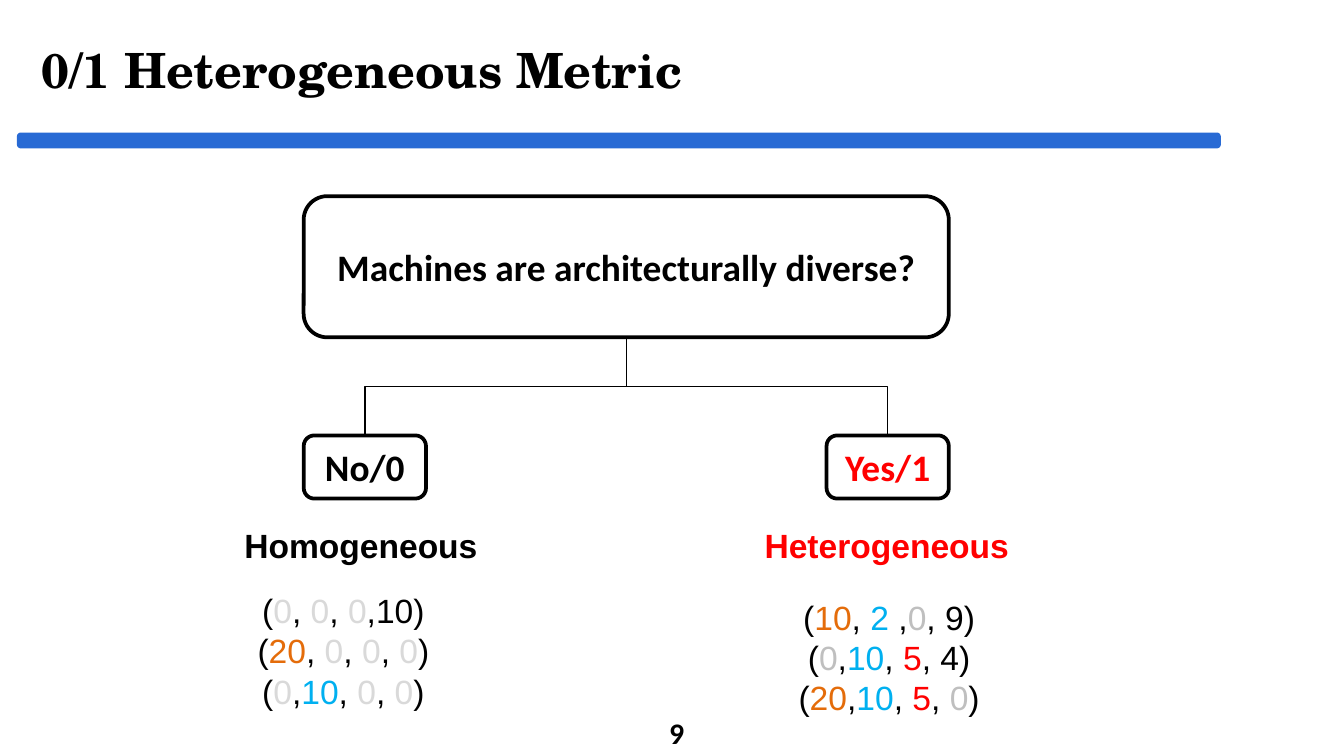
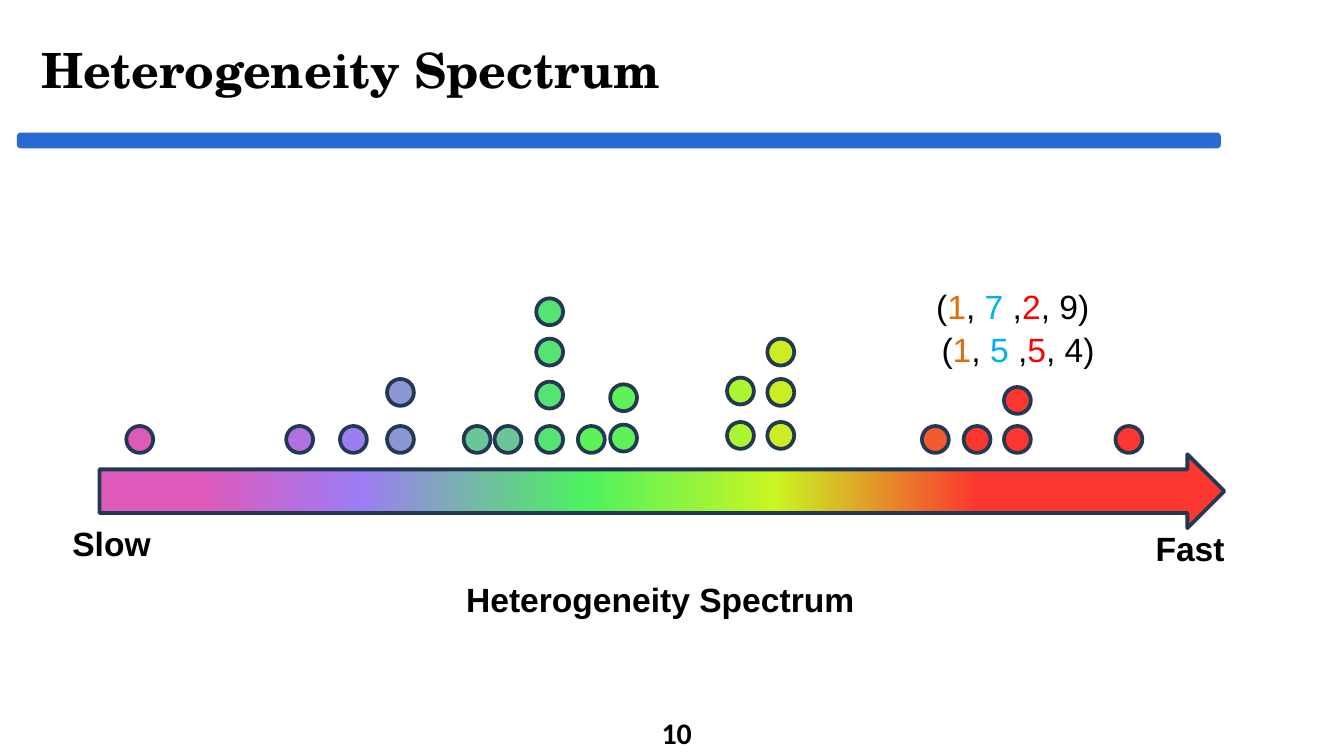
from itertools import groupby

from lxml.etree import SubElement
from pptx import Presentation
from pptx.dml.color import RGBColor
from pptx.enum.shapes import MSO_CONNECTOR, MSO_SHAPE
from pptx.enum.text import MSO_ANCHOR, PP_ALIGN
from pptx.oxml.ns import qn
from pptx.util import Inches, Pt

BLACK = RGBColor(0x00, 0x00, 0x00)
RED = RGBColor(0xFF, 0x00, 0x00)
ORANGE = RGBColor(0xE4, 0x6C, 0x0A)
SKY = RGBColor(0x00, 0xB0, 0xF0)
LIGHT_GRAY = RGBColor(0xD9, 0xD9, 0xD9)
GRAY = RGBColor(0xBF, 0xBF, 0xBF)
BAND_BLUE = RGBColor(0x28, 0x6A, 0xD4)
NAVY = RGBColor(0x23, 0x39, 0x53)
PINK = RGBColor(0xDD, 0x59, 0xBA)
PURPLE = RGBColor(0xB2, 0x71, 0xE2)
VIOLET = RGBColor(0x9E, 0x7D, 0xF3)
PERIWINKLE = RGBColor(0x8C, 0x96, 0xD3)
TEAL = RGBColor(0x6B, 0xC6, 0x97)
GREEN = RGBColor(0x57, 0xE2, 0x74)
BRIGHT_GREEN = RGBColor(0x5E, 0xF2, 0x59)
LIME = RGBColor(0xAB, 0xF5, 0x31)
YELLOW = RGBColor(0xCC, 0xEC, 0x23)
FLAME = RGBColor(0xF2, 0x5B, 0x2D)
SCARLET = RGBColor(0xFC, 0x37, 0x2F)

MACHINE_COLORS = (ORANGE, SKY, RED, BLACK)
SPECTRUM = (
    (9, PINK),
    (23, RGBColor(0x9E, 0x7C, 0xF4)),
    (43, RGBColor(0x4D, 0xF1, 0x61)),
    (60, RGBColor(0xC9, 0xF6, 0x22)),
    (78, SCARLET),
)
DOT_COLUMNS = (
    (0.2, PINK, (0.21,)),
    (1.39, PURPLE, (0.21,)),
    (1.79, VIOLET, (0.21,)),
    (2.14, PERIWINKLE, (0.21, 0.56)),
    (2.71, TEAL, (0.21,)),
    (2.94, TEAL, (0.21,)),
    (3.25, GREEN, (0.21, 0.54, 0.86, 1.16)),
    (3.56, BRIGHT_GREEN, (0.21,)),
    (3.8, BRIGHT_GREEN, (0.22, 0.52)),
    (4.67, LIME, (0.24, 0.57)),
    (4.97, YELLOW, (0.24, 0.56, 0.86)),
    (6.12, FLAME, (0.21,)),
    (6.43, SCARLET, (0.21,)),
    (6.73, SCARLET, (0.21, 0.5)),
    (7.56, SCARLET, (0.21,)),
)
DOT_SIZE = 0.2


def style_run(r, size, color, font, bold):
    r.font.size = Pt(size)
    r.font.name = font
    r.font.bold = bold
    r.font.color.rgb = color


def write(sp, text, size, color=BLACK, font="Arial", align=PP_ALIGN.LEFT):
    p = sp.text_frame.paragraphs[0]
    p.text = text
    p.alignment = align
    style_run(p.runs[0], size, color, font, True)


def add_text(s, left, top, width, height, wrap=True, anchor=MSO_ANCHOR.TOP):
    box = s.shapes.add_textbox(Inches(left), Inches(top), Inches(width), Inches(height))
    box.text_frame.word_wrap = wrap
    box.text_frame.vertical_anchor = anchor
    return box


def add_label(s, left, top, width, text, color=BLACK):
    write(add_text(s, left, top, width, 0.4, wrap=False), text, 18, color)


def add_outlined(s, kind, left, top, width, height, line, fill=None):
    sp = s.shapes.add_shape(kind, Inches(left), Inches(top), Inches(width), Inches(height))
    sp.shadow.inherit = False
    sp.line.color.rgb = line
    sp.line.width = Pt(2)
    if fill is None:
        sp.fill.background()
    else:
        sp.fill.solid()
        sp.fill.fore_color.rgb = fill
    return sp


def add_vectors(s, left, top, width, vectors, zero_color=GRAY):
    tf = add_text(s, left, top, width, 0.1 + 0.3 * len(vectors)).text_frame
    for i, vector in enumerate(vectors):
        p = tf.paragraphs[0] if i == 0 else tf.add_paragraph()
        p.alignment = PP_ALIGN.CENTER
        colors = iter(MACHINE_COLORS)
        for is_number, chars in groupby(vector, str.isdigit):
            r = p.add_run()
            r.text = "".join(chars)
            color = next(colors) if is_number else BLACK
            style_run(r, 18, zero_color if r.text == "0" else color, "Arial", False)


def add_frame(prs, title, number):
    s = prs.slides.add_slide(prs.slide_layouts[6])
    add_outlined(s, MSO_SHAPE.ROUNDED_RECTANGLE, 0.14, 1, 8.93, 0.09, BAND_BLUE, BAND_BLUE)
    heading = add_text(s, 0.21, 0.1, 8.9, 0.83, anchor=MSO_ANCHOR.MIDDLE)
    write(heading, title, 26, font="TeX Gyre Schola")
    footer = add_text(s, 3.87, 5.3, 2.33, 0.3, anchor=MSO_ANCHOR.MIDDLE)
    write(footer, str(number), 16, font="Calibri", align=PP_ALIGN.CENTER)
    return s


def add_node(s, left, top, width, height, text, color=BLACK):
    sp = add_outlined(s, MSO_SHAPE.ROUNDED_RECTANGLE, left, top, width, height, BLACK)
    sp.text_frame.word_wrap = True
    sp.text_frame.vertical_anchor = MSO_ANCHOR.MIDDLE
    write(sp, text, 20, color, "Calibri", PP_ALIGN.CENTER)


def add_branch(s, x1, y1, x2, y2):
    drop, run = y2 - y1, x2 - x1
    mid_x, mid_y = (x1 + x2) / 2, (y1 + y2) / 2
    dx = drop / 2 if run > 0 else -drop / 2
    dy = abs(run) / 2
    cn = s.shapes.add_connector(
        MSO_CONNECTOR.ELBOW,
        Inches(mid_x + dx), Inches(mid_y - dy),
        Inches(mid_x - dx), Inches(mid_y + dy),
    )
    cn.line.color.rgb = BLACK
    cn.line.width = Pt(0.75)
    spPr = cn.element.spPr
    spPr.find(qn("a:xfrm")).set("rot", str((270 if run > 0 else 90) * 60000))
    SubElement(spPr, qn("a:effectLst"))


def add_decision_tree(s, left, top, width):
    root_h, leaf_top, leaf_w, leaf_h = 1.05, 1.78, 0.91, 0.47
    add_node(s, left, top, width, root_h, "Machines are architecturally diverse?")
    leaves = ((left + width - leaf_w, "Yes/1", RED), (left, "No/0", BLACK))
    for x, text, color in leaves:
        add_node(s, x, top + leaf_top, leaf_w, leaf_h, text, color)
        add_branch(s, left + width / 2, top + root_h, x + leaf_w / 2, top + leaf_top)


def add_spectrum_arrow(s, left, top, width, height):
    sp = add_outlined(s, MSO_SHAPE.RIGHT_ARROW, left, top, width, height, NAVY)
    sp.adjustments[0] = 0.59
    sp.adjustments[1] = 0.5
    sp.fill.gradient()
    sp.fill.gradient_angle = 0
    stops = sp.element.spPr.find(qn("a:gradFill")).find(qn("a:gsLst"))
    for stop in list(stops):
        stops.remove(stop)
    for percent, color in SPECTRUM:
        gs = SubElement(stops, qn("a:gs"), pos=str(percent * 1000))
        SubElement(gs, qn("a:srgbClr"), val=str(color))


def add_dots(s, left, base):
    for x, color, rises in DOT_COLUMNS:
        for rise in rises:
            add_outlined(s, MSO_SHAPE.OVAL, left + x, base - rise, DOT_SIZE, DOT_SIZE, NAVY, color)


def build_metric_slide(prs):
    s = add_frame(prs, "0/1 Heterogeneous Metric", 9)
    add_decision_tree(s, 2.26, 1.46, 4.8)
    add_label(s, 1.72, 3.86, 1.99, "Homogeneous")
    add_label(s, 5.59, 3.86, 2.02, "Heterogeneous", RED)
    homogeneous = ("(0, 0, 0,10)", "(20, 0, 0, 0)", "(0,10, 0, 0)")
    heterogeneous = ("(10, 2 ,0, 9)", "(0,10, 5, 4)", "(20,10, 5, 0)")
    add_vectors(s, 1.56, 4.34, 1.99, homogeneous, LIGHT_GRAY)
    add_vectors(s, 5.62, 4.39, 1.99, heterogeneous)


def build_spectrum_slide(prs):
    s = add_frame(prs, "Heterogeneity Spectrum", 10)
    left, top = 0.74, 3.38
    add_spectrum_arrow(s, left, top, 8.37, 0.55)
    add_dots(s, left, top)
    add_label(s, 8.5, 3.88, 0.76, "Fast")
    add_label(s, 0.44, 3.84, 0.9, "Slow")
    add_label(s, 3.37, 4.26, 3.1, "Heterogeneity Spectrum")
    add_vectors(s, 6.78, 2.4, 1.59, ("(1, 5 ,5, 4)",))
    add_vectors(s, 6.74, 2.08, 1.59, ("(1, 7 ,2, 9)",))


def main():
    prs = Presentation()
    prs.slide_width = Inches(10)
    prs.slide_height = prs.slide_width * 9 // 16
    build_metric_slide(prs)
    build_spectrum_slide(prs)
    prs.save("out.pptx")


if __name__ == "__main__":
    main()
